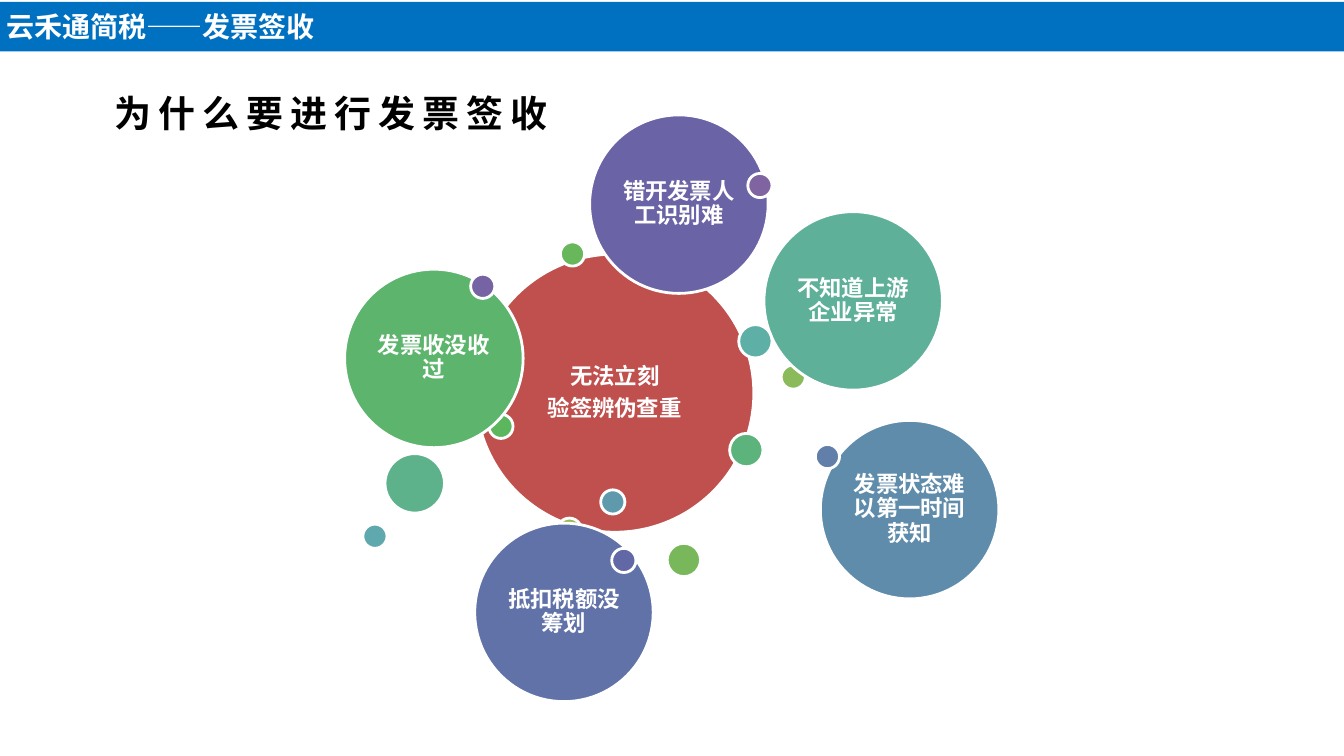
from dataclasses import dataclass

from pptx import Presentation
from pptx.dml.color import RGBColor
from pptx.enum.shapes import MSO_SHAPE as Preset
from pptx.enum.text import MSO_ANCHOR as Anchor, MSO_AUTO_SIZE as AutoSize, PP_ALIGN as Align
from pptx.oxml.ns import qn
from pptx.util import Pt


@dataclass(frozen=True)
class Theme:
    """Colours, font and type sizes of the slide."""
    font: str = "Noto Sans CJK SC"
    banner: str = "0070C0"
    white: str = "FFFFFF"
    black: str = "000000"
    banner_size: float = 20
    title_size: float = 26.4
    bubble_size: float = 16
    outline: float = 2


THEME = Theme()
HUB, LARGE, MEDIUM, SMALL, DOT = 198.7, 127.5, 42.5, 23.8, 17.3

BUBBLES = [
    (93.6, 99.4, HUB, "C0504D", "无法立刻\n验签辨伪查重"),
    (151.9, 288, DOT, "9BBB59", ""),
    (311.8, 178.6, DOT, "8ABA5A", ""),
    (230.4, 306, SMALL, "79B85A", ""),
    (154.1, 90.7, DOT, "69B75B", ""),
    (103, 213.8, DOT, "5BB65D", ""),
    (0, 110.2, LARGE, "5CB46D", "发票收没收过"),
    (275, 227.5, SMALL, "5CB37C", ""),
    (28.8, 241.9, MEDIUM, "5DB28B", ""),
    (299.5, 69.1, LARGE, "5EB099", "不知道上游企业异常"),
    (281.5, 149.8, SMALL, "5EAFA6", ""),
    (13, 292.3, DOT, "5FA8AD", ""),
    (182.9, 267.8, DOT, "5F9AAC", ""),
    (339.8, 218.2, LARGE, "608CAB", "发票状态难以第一时间获知"),
    (336.2, 235.4, DOT, "617FA9", ""),
    (92.9, 291.6, LARGE, "6172A8", "抵扣税额没筹划"),
    (190.8, 309.6, DOT, "6267A6", ""),
    (175, 0, LARGE, "6A63A5", "错开发票人工识别难"),
    (90, 113.8, DOT, "7563A3", ""),
    (288, 41.8, DOT, "8064A2", ""),
]


def write_text(shape, text, *, size, color, align=Align.LEFT, anchor=Anchor.MIDDLE,
               insets=(7.2, 3.6), line_spacing=1.0, space_after=0, tracking=0):
    """Fill a shape with bold text, one paragraph per line of the string."""
    frame = shape.text_frame
    frame.word_wrap = True
    frame.auto_size = AutoSize.NONE
    frame.vertical_anchor = anchor
    frame.margin_left = frame.margin_right = Pt(insets[0])
    frame.margin_top = frame.margin_bottom = Pt(insets[1])
    for index, line in enumerate(text.split("\n")):
        paragraph = frame.add_paragraph() if index else frame.paragraphs[0]
        paragraph.alignment = align
        paragraph.line_spacing = line_spacing
        paragraph.space_before = Pt(0)
        paragraph.space_after = Pt(space_after)
        run = paragraph.add_run()
        run.text = line
        run.font.name = THEME.font
        run.font.size = Pt(size)
        run.font.bold = True
        run.font.color.rgb = RGBColor.from_string(color)
        properties = run.font._element
        properties.find(qn("a:latin")).addnext(
            properties.makeelement(qn("a:ea"), {"typeface": THEME.font}))
        if tracking:
            properties.set("spc", str(round(tracking * 100)))


def add_filled_shape(slide, preset, box, fill, outline=None):
    """Add a flat preset shape with an optional outline colour."""
    shape = slide.shapes.add_shape(preset, *(Pt(length) for length in box))
    shape.shadow.inherit = False
    shape.fill.solid()
    shape.fill.fore_color.rgb = RGBColor.from_string(fill)
    if outline:
        shape.line.color.rgb = RGBColor.from_string(outline)
        shape.line.width = Pt(THEME.outline)
    else:
        shape.line.fill.background()
    return shape


def add_banner(slide, box, text):
    """Draw the coloured strip that names the product and the topic."""
    banner = add_filled_shape(slide, Preset.RECTANGLE, box, THEME.banner)
    write_text(banner, text, size=THEME.banner_size, color=THEME.white, insets=(4.3, 2.2))


def place_title(slide, box, text):
    """Move the title placeholder into its box and set its text."""
    title = slide.shapes.title
    title.left, title.top, title.width, title.height = (Pt(length) for length in box)
    write_text(title, text, size=THEME.title_size, color=THEME.black,
               anchor=Anchor.TOP, tracking=5)


def add_bubble_cluster(slide, box, bubbles):
    """Draw the hub, its satellites and the dots from back to front."""
    left, top = box[:2]
    for x, y, diameter, fill, text in bubbles:
        bubble = add_filled_shape(slide, Preset.OVAL, (left + x, top + y, diameter, diameter),
                                  fill, THEME.white)
        if text:
            write_text(bubble, text, size=THEME.bubble_size, color=THEME.white,
                       align=Align.CENTER, insets=(4.5, 4.5), line_spacing=0.9,
                       space_after=5.6)


def main():
    """Build and save the slide."""
    presentation = Presentation()
    presentation.slide_width, presentation.slide_height = Pt(960), Pt(540)
    slide = presentation.slides.add_slide(presentation.slide_layouts[5])
    add_banner(slide, (0, 1.4, 960, 35.3), "云禾通简税——发票签收")
    place_title(slide, (74.9, 61.2, 349.2, 34.6), "为什么要进行发票签收")
    add_bubble_cluster(slide, (246.2, 82.1, 467.3, 419.1), BUBBLES)
    presentation.save("out.pptx")


if __name__ == "__main__":
    main()
